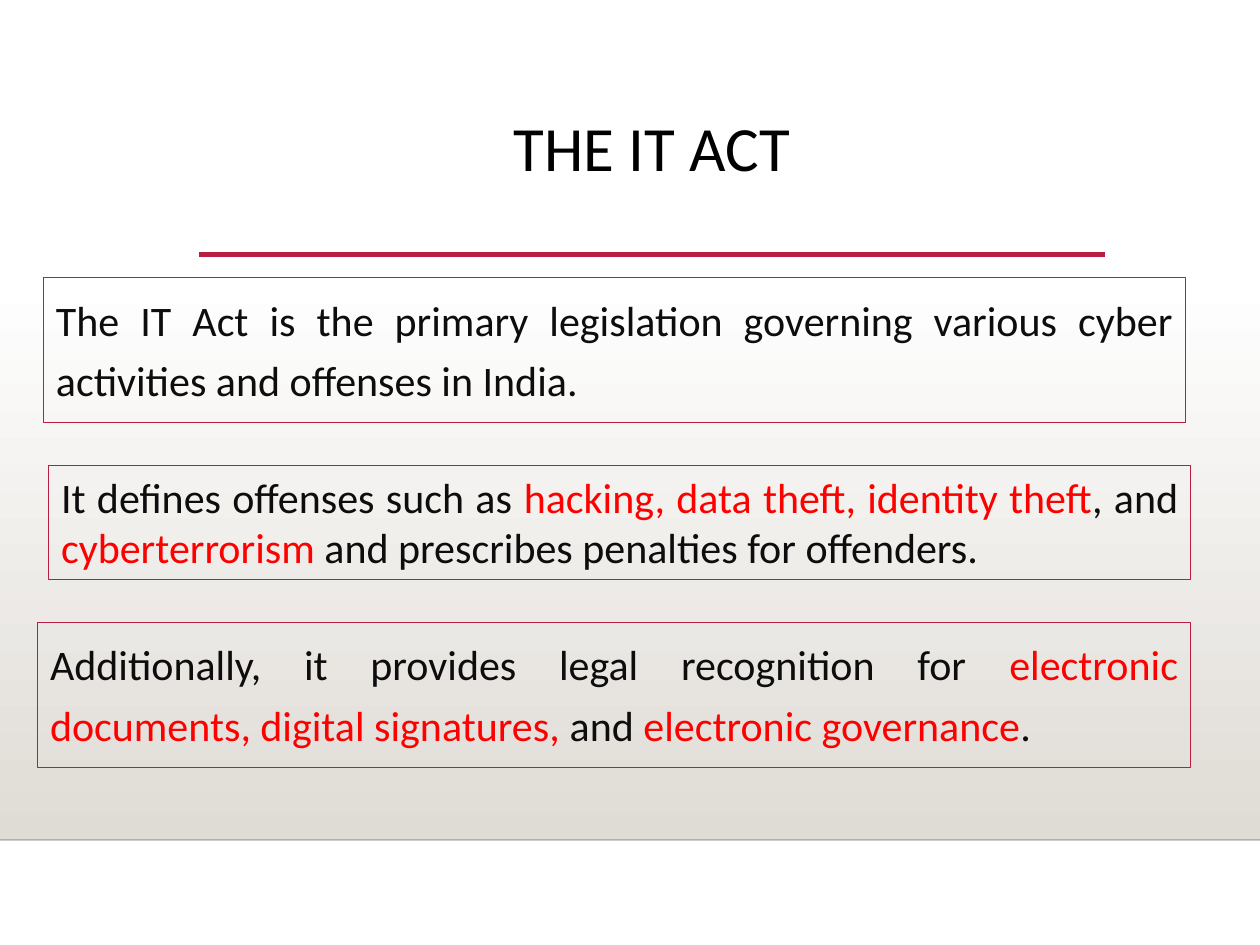
from lxml import etree
from pptx import Presentation
from pptx.dml.color import RGBColor
from pptx.enum.shapes import MSO_CONNECTOR, MSO_SHAPE
from pptx.enum.text import MSO_ANCHOR, PP_ALIGN
from pptx.oxml.ns import qn
from pptx.util import Pt

RECTANGLE = MSO_SHAPE.RECTANGLE
STRAIGHT = MSO_CONNECTOR.STRAIGHT
TOP = MSO_ANCHOR.TOP
CENTER, JUSTIFY = PP_ALIGN.CENTER, PP_ALIGN.JUSTIFY

THEME = {
    "font": "Calibri", "title_size": 36, "body_size": 24,
    "title": "000000", "body": "0D0D0D", "highlight": "FF0000",
    "accent": "B71E42", "floor": "000001",
    "fade_top": "FFFFFF", "fade_bottom": "DFDBD5",
}
SLIDE_WIDTH, SLIDE_HEIGHT = 720, 540

TITLE = "THE IT ACT"
TITLE_BOX = (113.8, 63.4, 517.7, 82.8)
FADE_BOX = (0, 158.4, SLIDE_WIDTH, 321.5)

# Each statement: box (left, top, width, height), line spacing,
# and (wording, colour role) pairs
STATEMENTS = [
    ((24.9, 158.7, 652.5, 82.8), 1.2, [
        ("The IT Act is the primary legislation governing various cyber "
         "activities and offenses in India.", "body"),
    ]),
    ((27.8, 265.9, 652.5, 65.4), 1.0, [
        ("It defines offenses such as ", "body"),
        ("hacking, data theft, identity theft", "highlight"),
        (", and ", "body"),
        ("cyberterrorism", "highlight"),
        (" and prescribes penalties for offenders.", "body"),
    ]),
    ((21.5, 355.8, 658.8, 82.8), 1.2, [
        ("Additionally, it provides legal recognition for ", "body"),
        ("electronic documents, digital signatures, ", "highlight"),
        ("and ", "body"),
        ("electronic governance", "highlight"),
        (".", "body"),
    ]),
]


def color(role):
    return RGBColor.from_string(THEME[role])


def write(frame, pieces, size, alignment, spacing):
    frame.word_wrap = True
    frame.vertical_anchor = TOP
    paragraph = frame.paragraphs[0]
    paragraph.alignment = alignment
    paragraph.line_spacing = spacing
    for wording, role in pieces:
        run = paragraph.add_run()
        run.text = wording
        run.font.name = THEME["font"]
        run.font.size = Pt(THEME[size])
        run.font.color.rgb = color(role)


def add_rectangle(slide, box):
    rectangle = slide.shapes.add_shape(RECTANGLE, *map(Pt, box))
    rectangle.shadow.inherit = False
    return rectangle


def add_fade(slide):
    fade = add_rectangle(slide, FADE_BOX)
    fade.line.fill.background()
    fade.fill.gradient()
    fade.fill.gradient_angle = 270
    for stop, role in zip(fade.fill.gradient_stops, ("fade_top", "fade_bottom")):
        stop.color.rgb = color(role)


def add_rule(slide, left, right, y, role, weight):
    rule = slide.shapes.add_connector(STRAIGHT, Pt(left), Pt(y), Pt(right), Pt(y))
    rule.line.color.rgb = color(role)
    rule.line.width = Pt(weight)
    properties = rule._element.spPr
    etree.SubElement(properties, qn("a:effectLst"))
    return properties


def add_statement(slide, box, spacing, pieces):
    statement = add_rectangle(slide, box)
    statement.fill.background()
    statement.line.color.rgb = color("accent")
    statement.line.width = Pt(0.75)
    write(statement.text_frame, pieces, "body_size", JUSTIFY, spacing)


def main():
    deck = Presentation()
    deck.slide_width, deck.slide_height = Pt(SLIDE_WIDTH), Pt(SLIDE_HEIGHT)
    slide = deck.slides.add_slide(deck.slide_layouts[6])

    add_fade(slide)
    floor = add_rule(slide, 0, SLIDE_WIDTH, 480, "floor", 1)
    floor_color = next(floor.iter(qn("a:srgbClr")))
    etree.SubElement(floor_color, qn("a:alpha"), val="20000")

    left, _, width, _ = TITLE_BOX
    add_rule(slide, left, left + width, 145.5, "accent", 2.5)
    title = slide.shapes.add_textbox(*map(Pt, TITLE_BOX))
    write(title.text_frame, [(TITLE, "title")], "title_size", CENTER, 0.9)

    for box, spacing, pieces in STATEMENTS:
        add_statement(slide, box, spacing, pieces)
    deck.save("out.pptx")


if __name__ == "__main__":
    main()
